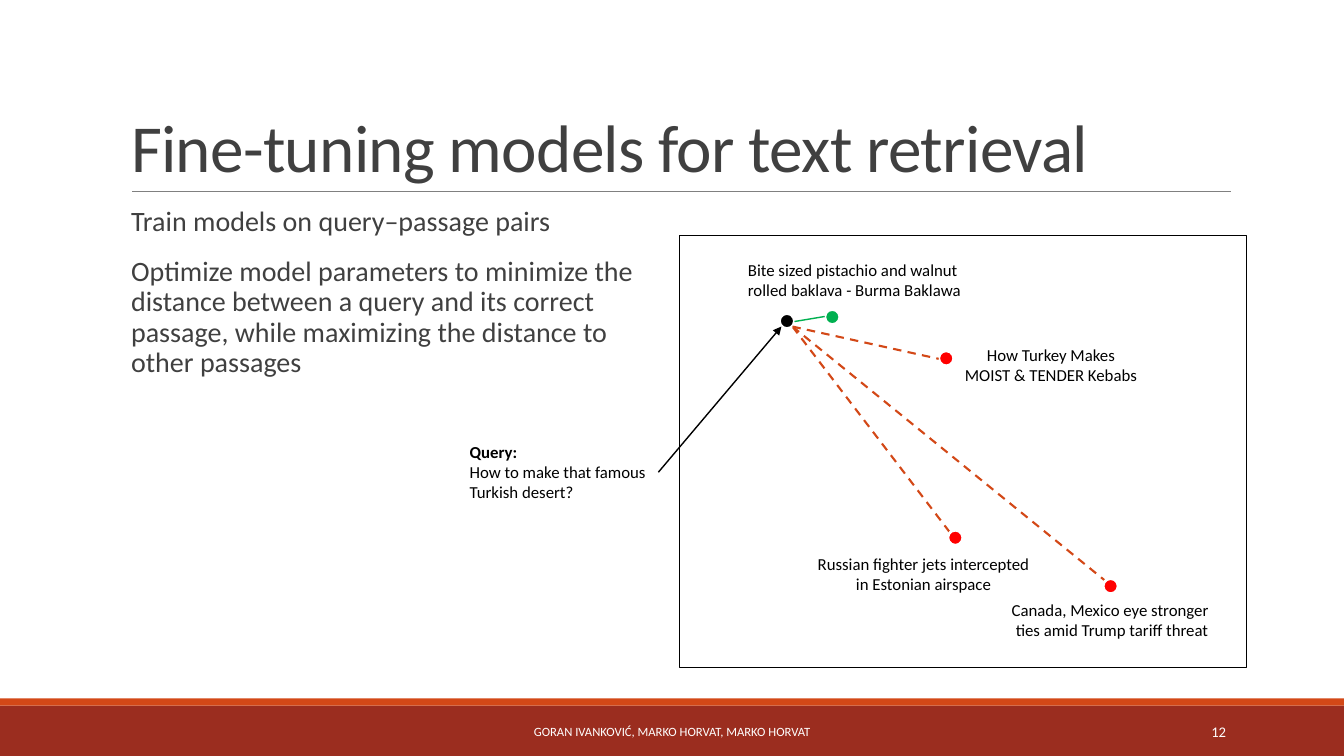
from lxml import etree
from pptx import Presentation
from pptx.dml.color import RGBColor
from pptx.enum.dml import MSO_LINE
from pptx.enum.shapes import MSO_CONNECTOR, MSO_SHAPE
from pptx.enum.text import MSO_ANCHOR, MSO_AUTO_SIZE, PP_ALIGN
from pptx.oxml.ns import qn
from pptx.util import Inches, Pt

LEFT, CENTER, RIGHT = PP_ALIGN.LEFT, PP_ALIGN.CENTER, PP_ALIGN.RIGHT
TOP, MIDDLE, BOTTOM = MSO_ANCHOR.TOP, MSO_ANCHOR.MIDDLE, MSO_ANCHOR.BOTTOM
RECT, OVAL = MSO_SHAPE.RECTANGLE, MSO_SHAPE.OVAL
DASH, STRAIGHT = MSO_LINE.DASH, MSO_CONNECTOR.STRAIGHT
FIT, FIXED = MSO_AUTO_SIZE.SHAPE_TO_FIT_TEXT, MSO_AUTO_SIZE.NONE
FONT = "Calibri"
COLORS = {
    "brick": "9B2D1F", "orange": "D34817", "rule": "808080", "text": "404040",
    "black": "000000", "white": "FFFFFF", "red": "FF0000", "green": "00B050",
}

TITLE = "Fine-tuning models for text retrieval"
BODY = [
    "Train models on query–passage pairs",
    "Optimize model parameters to minimize the distance between a query and "
    "its correct passage, while maximizing the distance to other passages",
]
FOOTER = "GORAN IVANKOVIĆ, MARKO HORVAT, MARKO HORVAT"
NUMBER = "12"
QUERY = ["Query:", "How to make that famous", "Turkish desert?"]
QUERY_BOX = (4.56, 4.33, 1.97, 0.71)

# lines, label box, alignment, dot corner, dot colour
PASSAGES = [
    (["How Turkey Makes", "MOIST & TENDER Kebabs"],
     (9.46, 3.37, 1.93, 0.5), CENTER, (9.31, 3.48), "red"),
    (["Bite sized pistachio and walnut", "rolled baklava - Burma Baklawa"],
     (7.32, 2.53, 2.34, 0.5), LEFT, (8.18, 3.07), "green"),
    (["Canada, Mexico eye stronger ", "ties amid Trump tariff threat"],
     (9.92, 5.9, 2.22, 0.5), CENTER, (10.94, 5.74), "red"),
    (["Russian fighter jets intercepted", "in Estonian airspace"],
     (7.98, 5.44, 2.36, 0.5), CENTER, (9.4, 5.26), "red"),
]
DOT = 0.15
QUERY_DOT = (7.73, 3.11)
HUB = (7.86, 3.24)
FAR_ENDS = [(9.42, 5.28), (10.96, 5.76)]
NEAR_END = (9.31, 3.56)


def rgb(name):
    return RGBColor.from_string(COLORS[name])


def place(shape, box):
    shape.left, shape.top, shape.width, shape.height = map(Inches, box)


def write(shape, lines, size=12, color="black", align=LEFT, anchor=TOP,
          wrap=True, fit=FIXED, head=False, spacing=None):
    """Fill a shape with paragraphs; head makes the first one bold."""
    frame = shape.text_frame
    frame.word_wrap, frame.auto_size = wrap, fit
    frame.vertical_anchor = anchor
    for i, line in enumerate(lines):
        para = frame.add_paragraph() if i else frame.paragraphs[0]
        para.alignment = align
        if spacing:
            para.line_spacing = spacing
        run = para.add_run()
        run.text = line
        font = run.font
        font.name, font.size = FONT, Pt(size)
        font.color.rgb = rgb(color)
        font.bold = head and i == 0
    return frame


def label(slide, box, lines, **style):
    shape = slide.shapes.add_textbox(*map(Inches, box))
    write(shape, lines, **style)
    return shape


def draw(slide, kind, box, fill=None, line=None, width=1):
    shape = slide.shapes.add_shape(kind, *map(Inches, box))
    shape.shadow.inherit = False
    if fill:
        shape.fill.solid()
        shape.fill.fore_color.rgb = rgb(fill)
    else:
        shape.fill.background()
    if line:
        shape.line.color.rgb = rgb(line)
        shape.line.width = Pt(width)
    else:
        shape.line.fill.background()


def dot(slide, corner, color):
    draw(slide, OVAL, (*corner, DOT, DOT), color, "white", 2)


def link(slide, start, end, color, width, dash=None, arrow=False):
    line = slide.shapes.add_connector(STRAIGHT, *map(Inches, start + end))
    line.line.color.rgb = rgb(color)
    line.line.width = Pt(width)
    if dash:
        line.line.dash_style = dash
    if arrow:
        tail = etree.SubElement(line.line._get_or_add_ln(), qn("a:tailEnd"))
        tail.set("type", "triangle")
    etree.SubElement(line._element.spPr, qn("a:effectLst"))
    return line


def frame_slide(slide):
    """Draw the bottom bands, title rule, title, body and footer."""
    draw(slide, RECT, (0, 7, 13.33, 0.5), "brick")
    draw(slide, RECT, (0, 6.93, 13.33, 0.07), "orange")
    link(slide, (1.31, 1.9), (12.21, 1.9), "rule", 0.5)

    title, body = slide.placeholders
    place(title, (1.2, 0.31, 11, 1.59))
    frame = write(title, [TITLE], size=48, color="text", anchor=BOTTOM,
                  spacing=0.85)
    frame.paragraphs[0].runs[0].font._element.set("spc", "-50")

    place(body, (1.2, 2.01, 5.13, 4.4))
    frame = write(body, BODY, size=20, color="text", spacing=0.9)
    frame.margin_left = frame.margin_right = 0
    for para in frame.paragraphs:
        para.space_before, para.space_after = Pt(12), Pt(2)
        props = para._p.get_or_add_pPr()
        props.set("marL", str(Inches(0.1)))
        props.set("indent", str(-Inches(0.1)))
        etree.SubElement(props, qn("a:buChar")).set("char", " ")

    label(slide, (4.03, 7.06, 5.27, 0.4), [FOOTER], size=9, color="white",
          align=CENTER, anchor=MIDDLE)
    label(slide, (10.83, 7.06, 1.43, 0.4), [NUMBER], size=10.5, color="white",
          align=RIGHT, anchor=MIDDLE)


def plot(slide):
    """Draw the query, the passages and the distances between them."""
    draw(slide, RECT, (6.74, 2.34, 5.62, 4.28), line="black", width=0.75)
    for end in FAR_ENDS:
        link(slide, HUB, end, "orange", 1.5, DASH)
    for lines, box, align, corner, color in PASSAGES:
        dot(slide, corner, color)
        label(slide, box, lines, align=align, wrap=False, fit=FIT)
    query = label(slide, QUERY_BOX, QUERY, wrap=False, fit=FIT, head=True)
    dot(slide, QUERY_DOT, "black")
    arrow = link(slide, (6.53, 4.68), (7.75, 3.24), "black", 1, arrow=True)
    arrow.begin_connect(query, 3)
    link(slide, (8.18, 3.14), (7.88, 3.19), "green", 1)
    link(slide, HUB, NEAR_END, "orange", 1.5, DASH)


def main():
    deck = Presentation()
    deck.slide_width, deck.slide_height = Inches(13.33), Inches(7.5)
    slide = deck.slides.add_slide(deck.slide_layouts[1])
    frame_slide(slide)
    plot(slide)
    deck.save("out.pptx")


if __name__ == "__main__":
    main()
